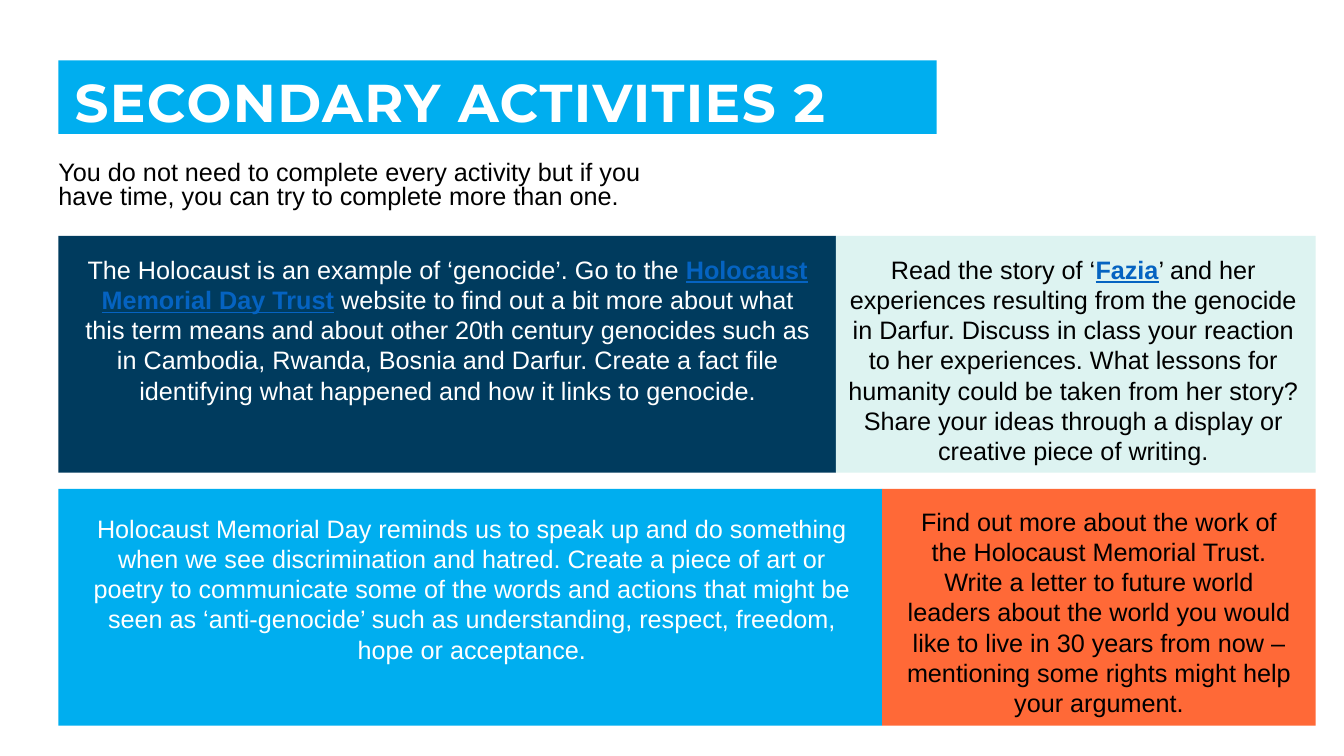
from dataclasses import dataclass
from pptx import Presentation
from pptx.dml.color import RGBColor
from pptx.enum.shapes import MSO_SHAPE
from pptx.enum.text import MSO_ANCHOR, PP_ALIGN
from pptx.util import Inches, Pt


@dataclass(frozen=True)
class Theme:
    sky: str = "00AEEF"
    navy: str = "003B5E"
    mint: str = "DDF3F1"
    orange: str = "FF6937"
    link: str = "0563C1"
    white: str = "FFFFFF"
    black: str = "000000"
    title_font: str = "Montserrat"
    body_font: str = "Arial"
    title_size: int = 38
    body_size: int = 18


THEME = Theme()
LEFT, GRID_TOP = 0.58, 2.34
GRID_WIDTH, ROW_HEIGHT, ROW_GAP = 12.47, 2.35, 0.16

ACTIVITY_ROWS = [
    (7.71, [
        (THEME.navy, THEME.white, (0.14, 0.13, 0.13), [
            ("The Holocaust is an example of ‘genocide’. Go to the ", False),
            ("Holocaust Memorial Day Trust", True),
            (" website to find out a bit more about what this term means and about "
             "other 20th century genocides such as in Cambodia, Rwanda, Bosnia and "
             "Darfur. Create a fact file identifying what happened and how it links "
             "to genocide.", False)]),
        (THEME.mint, THEME.black, (0, 0.13, 0.05), [
            ("Read the story of ‘", False),
            ("Fazia", True),
            ("’ and her experiences resulting from the genocide in Darfur. Discuss in "
             "class your reaction to her experiences. What lessons for humanity could "
             "be taken from her story? Share your ideas through a display or creative "
             "piece of writing.", False)]),
    ]),
    (8.17, [
        (THEME.sky, THEME.white, (0.15, 0.19, 0.12), [
            ("Holocaust Memorial Day reminds us to speak up and do something when we "
             "see discrimination and hatred. Create a piece of art or poetry to "
             "communicate some of the words and actions that might be seen as "
             "‘anti-genocide’ such as understanding, respect, freedom, hope or "
             "acceptance.", False)]),
        (THEME.orange, THEME.black, (0.12, 0.12, 0.12), [
            ("Find out more about the work of the Holocaust Memorial Trust. Write a "
             "letter to future world leaders about the world you would like to live in "
             "30 years from now – mentioning some rights might help your argument.",
             False)]),
    ]),
]


def add_panel(page, box, fill):
    panel = page.shapes.add_shape(MSO_SHAPE.RECTANGLE, *map(Inches, box))
    panel.shadow.inherit = False
    panel.fill.solid()
    panel.fill.fore_color.rgb = RGBColor.from_string(fill)
    panel.line.fill.background()
    return panel


def set_margins(frame, left, top, right, bottom):
    frame.margin_left, frame.margin_top = Inches(left), Inches(top)
    frame.margin_right, frame.margin_bottom = Inches(right), Inches(bottom)
    frame.word_wrap = True


def add_span(para, text, color, font=THEME.body_font, size=THEME.body_size):
    span = para.add_run()
    span.text = text
    span.font.name = font
    span.font.size = Pt(size)
    span.font.color.rgb = RGBColor.from_string(color)
    return span


def add_title(page, box):
    frame = add_panel(page, box, THEME.sky).text_frame
    set_margins(frame, 0.16, 0.16, 0.12, 0)
    frame.vertical_anchor = MSO_ANCHOR.MIDDLE
    para = frame.paragraphs[0]
    para.alignment = PP_ALIGN.LEFT
    para.line_spacing = 0.9
    span = add_span(para, "SECONDARY ACTIVITIES 2", THEME.white,
                    THEME.title_font, THEME.title_size)
    span.font.bold = True
    span.font._element.set("spc", "100")


def add_intro(page, box):
    frame = page.shapes.add_textbox(*map(Inches, box)).text_frame
    set_margins(frame, 0, 0.05, 0.1, 0.05)
    para = frame.paragraphs[0]
    para.line_spacing = 0.8
    add_span(para, "You do not need to complete every activity but if you have time, "
                   "you can try to complete more than one.", THEME.black)


def add_activity(page, box, fill, color, insets, pieces):
    left, top, width, height = box
    inset_left, inset_top, inset_right = insets
    add_panel(page, box, fill)
    text_box = (left + inset_left, top + inset_top,
                width - inset_left - inset_right, height - inset_top)
    frame = page.shapes.add_textbox(*map(Inches, text_box)).text_frame
    set_margins(frame, 0.1, 0.05, 0.1, 0.05)
    para = frame.paragraphs[0]
    para.alignment = PP_ALIGN.CENTER
    for text, is_link in pieces:
        span = add_span(para, text, THEME.link if is_link else color)
        span.font.bold = is_link
        span.font.underline = is_link


def add_activity_grid(page, box):
    left, top, width, row_height = box
    for row, (split, activities) in enumerate(ACTIVITY_ROWS):
        row_top = top + row * (row_height + ROW_GAP)
        columns = [(left, split), (left + split, width - split)]
        for (column_left, column_width), activity in zip(columns, activities):
            add_activity(page, (column_left, row_top, column_width, row_height),
                         *activity)


def main():
    deck = Presentation()
    deck.slide_width, deck.slide_height = Inches(13.33), Inches(7.5)
    page = deck.slides.add_slide(deck.slide_layouts[6])
    add_intro(page, (LEFT, 1.56, 6.21, 0.62))
    add_title(page, (LEFT, 0.6, 8.71, 0.73))
    add_activity_grid(page, (LEFT, GRID_TOP, GRID_WIDTH, ROW_HEIGHT))
    deck.save("out.pptx")


if __name__ == "__main__":
    main()
